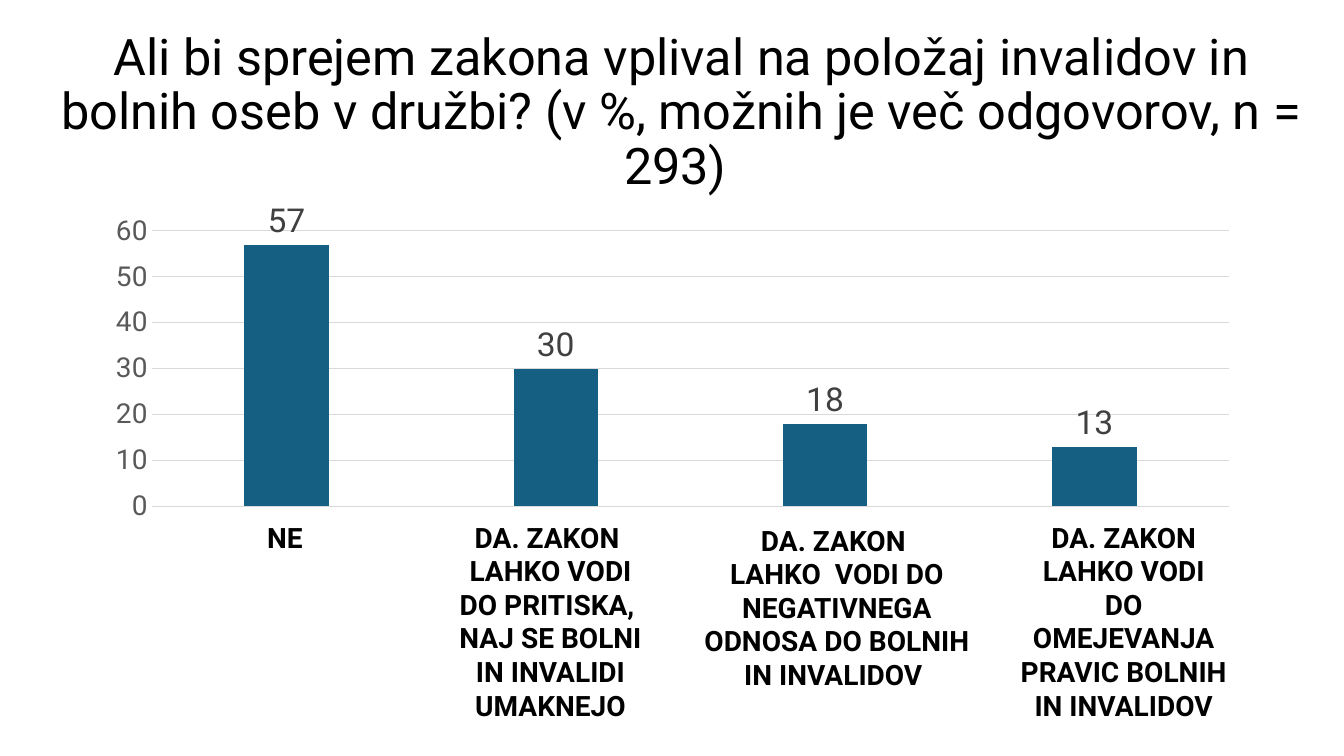
from pptx import Presentation
from pptx import util as u
from pptx.chart.data import CategoryChartData
from pptx.dml.color import RGBColor
from pptx.enum import chart as ch, text as tx

BLACK = RGBColor(0, 0, 0)
BLUE = RGBColor(0x15, 0x60, 0x82)
GRID = RGBColor(0xD9, 0xD9, 0xD9)
TICK = RGBColor(0x59, 0x59, 0x59)
VALUE = RGBColor(0x40, 0x40, 0x40)
FACE = "Roboto"

TITLE = ("Ali bi sprejem zakona vplival na položaj invalidov in bolnih oseb "
         "v družbi? (v %, možnih je več odgovorov, n = 293) ")
SHARES = [57, 30, 18, 13]
ANSWERS = [
    ((2.54, 5.11, 0.57, 0.44), ["NE"]),
    ((4.17, 5.11, 2.58, 2.42),
     ["DA. ZAKON ", "LAHKO VODI", "DO PRITISKA, ", "NAJ SE BOLNI",
      "IN INVALIDI", "UMAKNEJO"]),
    ((6.76, 5.14, 3.08, 1.78),
     ["DA. ZAKON ",
      "LAHKO  VODI DO NEGATIVNEGA ODNOSA DO BOLNIH IN INVALIDOV "]),
    ((9.95, 5.11, 2.39, 1.78),
     ["DA. ZAKON", "LAHKO VODI", "DO OMEJEVANJA", "PRAVIC BOLNIH",
      "IN INVALIDOV"]),
]


def inches(box):
    return [u.Inches(n) for n in box]


def style(font, size, color, bold=False):
    font.name = FACE
    font.size = u.Pt(size)
    font.bold = bold
    font.color.rgb = color


def add_line(para, line, size, bold=False):
    para.alignment = tx.PP_ALIGN.CENTER
    run = para.add_run()
    run.text = line
    style(run.font, size, BLACK, bold)


def add_title(slide, box):
    title = slide.shapes.title
    title.left, title.top, title.width, title.height = inches(box)
    frame = title.text_frame
    frame.word_wrap = True
    frame.auto_size = tx.MSO_AUTO_SIZE.NONE
    frame.vertical_anchor = tx.MSO_ANCHOR.MIDDLE
    para = frame.paragraphs[0]
    para.line_spacing = 0.9
    para.space_before = u.Pt(0)
    add_line(para, TITLE, 36)


def add_columns(slide, box):
    data = CategoryChartData()
    data.categories = [str(n + 1) for n in range(len(SHARES))]
    data.add_series("Series 1", SHARES)
    chart = slide.shapes.add_chart(
        ch.XL_CHART_TYPE.COLUMN_CLUSTERED, *inches(box), data).chart
    style(chart.font, 10, BLACK)
    chart.has_title = False
    chart.has_legend = False
    chart.category_axis.visible = False

    axis = chart.value_axis
    axis.minimum_scale, axis.maximum_scale, axis.major_unit = 0, 60, 10
    axis.major_tick_mark = ch.XL_TICK_MARK.NONE
    axis.format.line.fill.background()
    style(axis.tick_labels.font, 20, TICK)
    grid = axis.major_gridlines.format.line
    grid.color.rgb = GRID
    grid.width = u.Pt(0.75)

    plot = chart.plots[0]
    plot.gap_width, plot.overlap = 219, -27
    plot.vary_by_categories = False
    fill = plot.series[0].format.fill
    fill.solid()
    fill.fore_color.rgb = BLUE
    plot.has_data_labels = True
    labels = plot.data_labels
    labels.show_value = True
    labels.position = ch.XL_LABEL_POSITION.OUTSIDE_END
    style(labels.font, 24, VALUE)


def add_answer(slide, box, lines):
    frame = slide.shapes.add_textbox(*inches(box)).text_frame
    frame.word_wrap = len(lines) > 1
    for i, line in enumerate(lines):
        para = frame.add_paragraph() if i else frame.paragraphs[0]
        add_line(para, line, 20, True)


def main():
    deck = Presentation()
    deck.slide_width, deck.slide_height = u.Inches(13.33), u.Inches(7.5)
    slide = deck.slides.add_slide(deck.slide_layouts[5])
    add_title(slide, (0.46, 0.4, 12.6, 1.45))
    add_columns(slide, (0.92, 2, 11.5, 3.25))
    for box, lines in ANSWERS:
        add_answer(slide, box, lines)
    deck.save("out.pptx")


if __name__ == "__main__":
    main()
